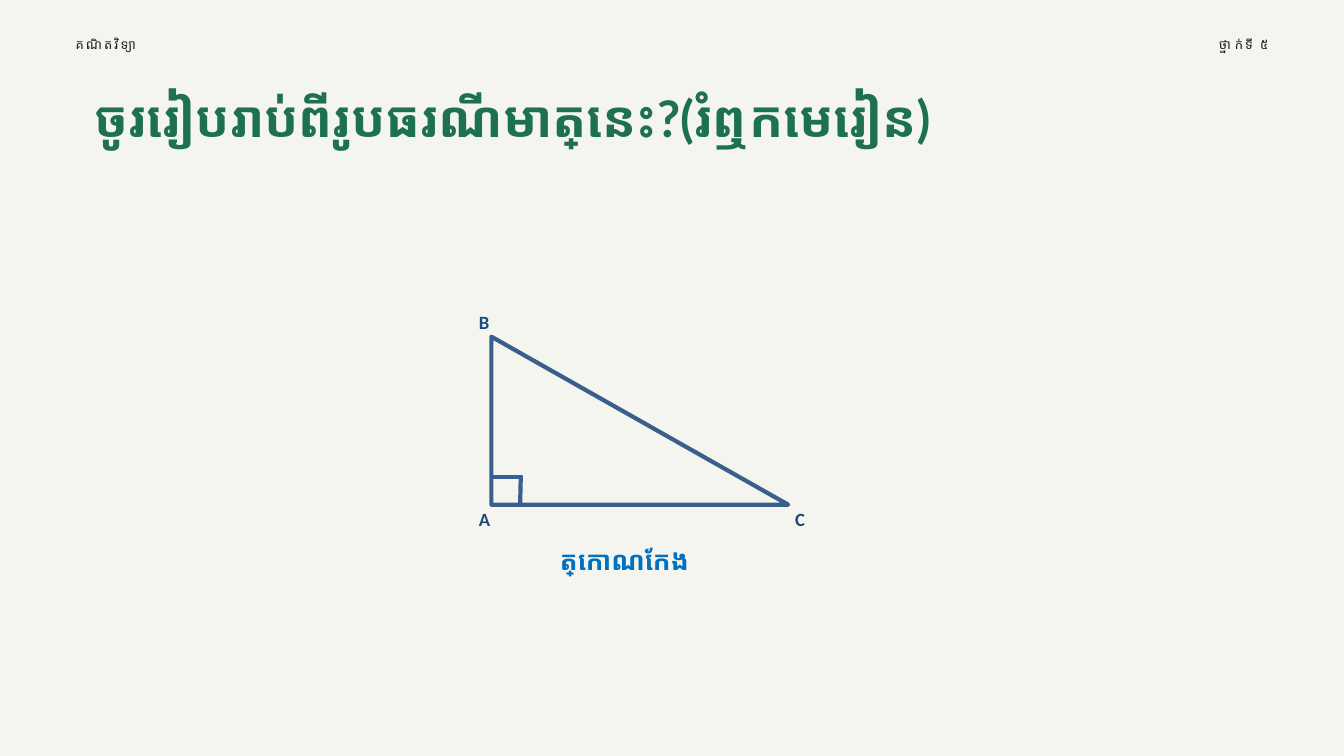
"""Build a geometry slide that asks pupils to describe a right triangle."""
from dataclasses import dataclass

from lxml import etree
from pptx import Presentation
from pptx.dml.color import RGBColor
from pptx.enum.shapes import MSO_CONNECTOR, MSO_SHAPE
from pptx.enum.text import MSO_ANCHOR, MSO_AUTO_SIZE, PP_ALIGN
from pptx.oxml.ns import qn
from pptx.util import Pt

PX = 9525
LEFT, MID, RIGHT = PP_ALIGN.LEFT, PP_ALIGN.CENTER, PP_ALIGN.RIGHT
TOP, FIXED = MSO_ANCHOR.TOP, MSO_AUTO_SIZE.NONE
STRAIGHT, RIGHT_TRI = MSO_CONNECTOR.STRAIGHT, MSO_SHAPE.RIGHT_TRIANGLE


@dataclass
class Label:
    text: str
    box: tuple[int, int, int, int]
    size: int
    ink: str
    font: str = "Lato"
    bold: bool = True
    align: PP_ALIGN = MID
    lead: float = 0
    track: int = 0
    inset: tuple[int, int] = (0, 0)


@dataclass
class Line:
    start: tuple[int, int]
    end: tuple[int, int]


def corner(text: str, left: int, top: int) -> Label:
    """Describe the letter at a corner of the triangle."""
    return Label(text, (left, top, 56, 42), 20, "1F497D", "Calibri",
                 align=LEFT, inset=(10, 5))


def header(text: str, left: int, align: PP_ALIGN) -> Label:
    """Describe a small line of text at the top of the slide."""
    return Label(text, (left, 49, 443, 25), 14, "202020", bold=False,
                 align=align, lead=19.6, track=210)


TITLE = Label("ចូររៀបរាប់ពីរូបធរណីមាត្រនេះ?(រំឮកមេរៀន)",
              (88, 72, 1288, 124), 54, "1D7151", lead=104)
NOTES = [
    header("គណិតវិទ្យា", 108, LEFT),
    header("ថ្នាក់ទី ៥", 1369, RIGHT),
    Label("ត្រីកោណកែង", (248, 684, 1288, 119), 28, "0070C0", lead=104),
]
CORNERS = [corner("B", 674, 439), corner("A", 674, 720), corner("C", 1126, 720)]
MARKS = [Line((704, 681), (746, 681)), Line((744, 679), (743, 724))]


def color(code: str) -> RGBColor:
    """Turn a hex string into a colour."""
    return RGBColor.from_string(code)


def scale(*marks: int) -> list[int]:
    """Turn px into EMU."""
    return [mark * PX for mark in marks]


def write(shape, label: Label) -> None:
    """Place a text shape and fill it with its label."""
    shape.left, shape.top, shape.width, shape.height = scale(*label.box)
    frame = shape.text_frame
    frame.word_wrap, frame.auto_size = True, FIXED
    frame.vertical_anchor = TOP
    side, edge = scale(*label.inset)
    frame.margin_left = frame.margin_right = side
    frame.margin_top = frame.margin_bottom = edge
    para = frame.paragraphs[0]
    para.alignment = label.align
    if label.lead:
        para.line_spacing = Pt(label.lead)
    run = para.add_run()
    run.text = label.text
    font = run.font
    font.name, font.size, font.bold = label.font, Pt(label.size), label.bold
    font.color.rgb = color(label.ink)
    if label.track:
        font._element.set("spc", str(label.track))


def add_text(shapes, label: Label) -> None:
    """Add a text box for a label."""
    write(shapes.add_textbox(*scale(*label.box)), label)


def stroke(line, ink: str) -> None:
    """Give an outline its colour and width."""
    line.color.rgb = color(ink)
    line.width = Pt(4.5)


def add_line(shapes, mark: Line) -> None:
    """Add one side of the right-angle mark."""
    link = shapes.add_connector(STRAIGHT, *scale(*mark.start, *mark.end))
    stroke(link.line, "376092")
    etree.SubElement(link._element.spPr, qn("a:effectLst"))


def draw_figure(shapes) -> None:
    """Draw the triangle with its angle mark and corner letters."""
    shape = shapes.add_shape(RIGHT_TRI, *scale(702, 481, 424, 240))
    shape.shadow.inherit = False
    shape.fill.background()
    stroke(shape.line, "3A5F8C")
    for mark in MARKS:
        add_line(shapes, mark)
    for label in CORNERS:
        add_text(shapes, label)


def main() -> None:
    """Build and save the slide."""
    deck = Presentation()
    deck.slide_width, deck.slide_height = scale(1920, 1080)
    slide = deck.slides.add_slide(deck.slide_layouts[5])
    fill = slide.background.fill
    fill.solid()
    fill.fore_color.rgb = color("F5F5EF")
    write(slide.shapes.title, TITLE)
    draw_figure(slide.shapes.add_group_shape().shapes)
    for label in NOTES:
        add_text(slide.shapes, label)
    deck.save("out.pptx")


if __name__ == "__main__":
    main()
